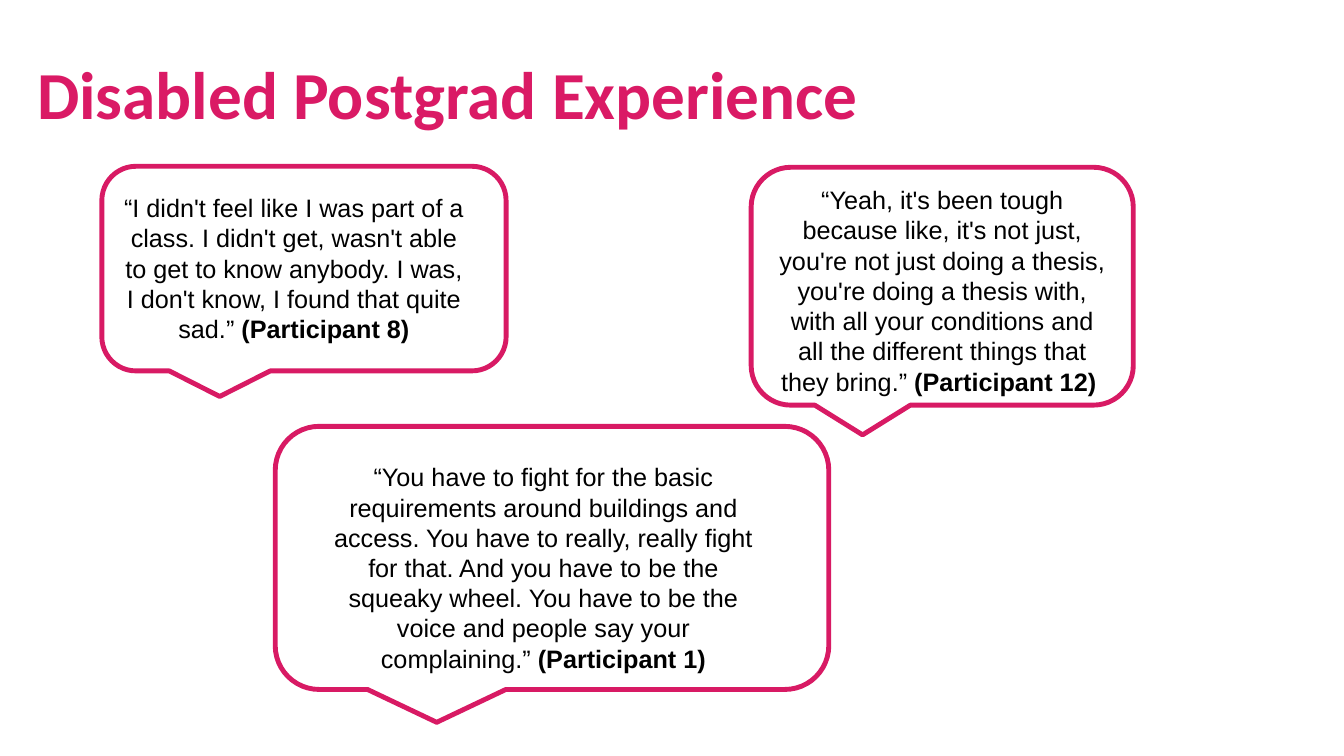
from pptx import Presentation
from pptx import util as u
from pptx.dml.color import RGBColor
from pptx.enum import shapes, text

COLOURS = {"title": "DA1A65", "outline": "D81A64", "quote": "000000", "page": "FFFFFF"}

QUOTES = [
    ((1.01, 1.65, 4.01, 2.03), (0.11, 0.21, 3.59, 1.62),
     "“I didn't feel like I was part of a class. I didn't get, wasn't able to get to "
     "know anybody. I was, I don't know, I found that quite sad.” ",
     "(Participant 8)"),
    ((2.73, 4.23, 5.49, 2.61), (0.38, 0.3, 4.56, 2.22),
     "“You have to fight for the basic requirements around buildings and access. You "
     "have to really, really fight for that. And you have to be the squeaky wheel. You "
     "have to be the voice and people say your complaining.” ",
     "(Participant 1)"),
    ((7.45, 1.66, 3.79, 2.36), (0.14, 0.12, 3.51, 2.22),
     "“Yeah, it's been tough because like, it's not just, you're not just doing a "
     "thesis, you're doing a thesis with, with all your conditions and all the "
     "different things that they bring.” ",
     "(Participant 12) "),
]


def colour(name):
    return RGBColor.from_string(COLOURS[name])


def add_text(page, box, spans, font, size, ink):
    frame = page.shapes.add_textbox(*map(u.Inches, box)).text_frame
    frame.word_wrap = True
    para = frame.paragraphs[0]
    para.font.name = font
    para.font.size = u.Pt(size)
    para.font.color.rgb = colour(ink)
    for words, bold in spans:
        span = para.add_run()
        span.text = words
        span.font.bold = bold
    return frame


def add_title(page, box, words):
    frame = add_text(page, box, [(words, True)], "Calibri", 48, "title")
    frame.vertical_anchor = text.MSO_ANCHOR.MIDDLE
    frame.paragraphs[0].line_spacing = 0.9


def add_quote(page, box, inset, words, speaker):
    bubble = page.shapes.add_shape(
        shapes.MSO_SHAPE.ROUNDED_RECTANGULAR_CALLOUT, *map(u.Inches, box))
    bubble.shadow.inherit = False
    bubble.fill.background()
    bubble.line.color.rgb = colour("outline")
    bubble.line.width = u.Pt(3.5)
    left, top, width, height = inset
    frame = add_text(page, (box[0] + left, box[1] + top, width, height),
                     [(words, False), (speaker, True)], "Arial", 18, "quote")
    frame.auto_size = text.MSO_AUTO_SIZE.SHAPE_TO_FIT_TEXT
    frame.paragraphs[0].alignment = text.PP_ALIGN.CENTER


def main():
    deck = Presentation()
    deck.slide_width, deck.slide_height = u.Inches(13.33), u.Inches(7.5)
    page = deck.slides.add_slide(deck.slide_layouts[6])
    page.background.fill.solid()
    page.background.fill.fore_color.rgb = colour("page")
    add_title(page, (0.27, 0.24, 11.5, 1.45), "Disabled Postgrad Experience")
    for quote in QUOTES:
        add_quote(page, *quote)
    deck.save("out.pptx")


if __name__ == "__main__":
    main()
